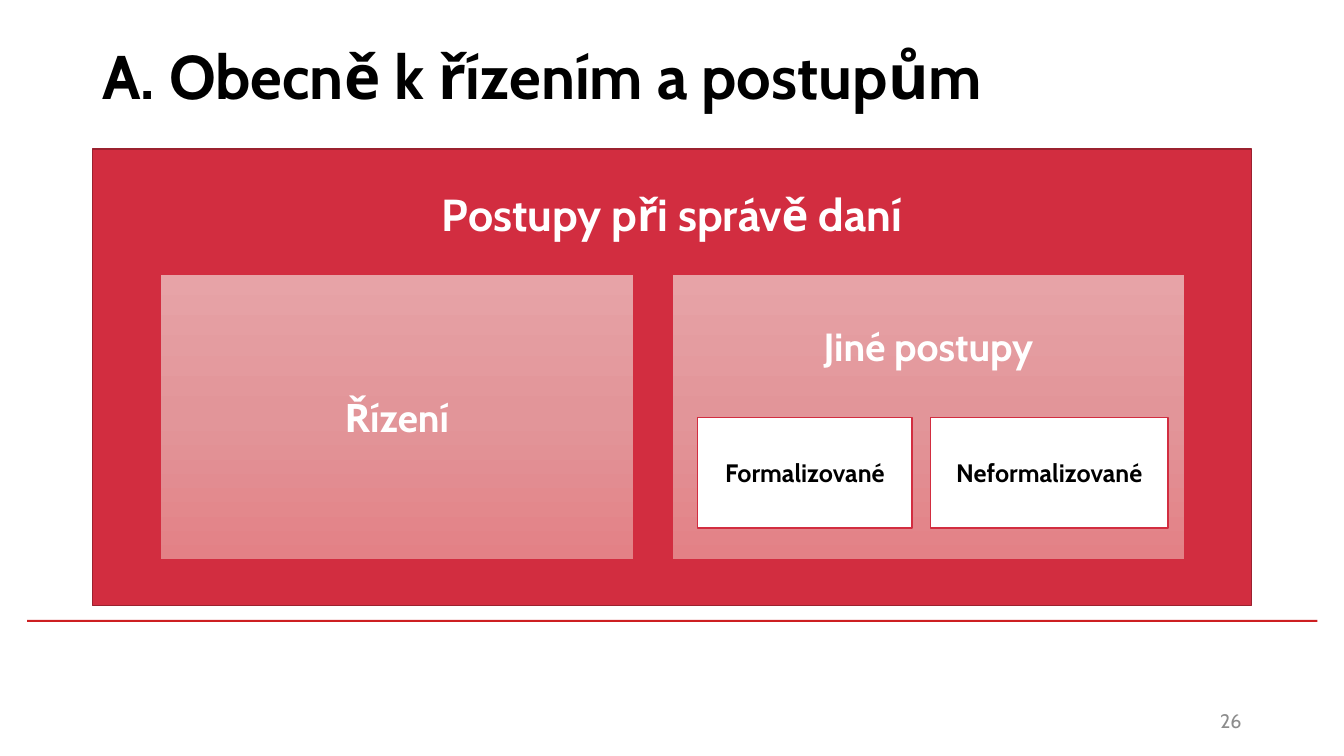
from copy import deepcopy
from dataclasses import dataclass

from pptx import Presentation
from pptx.dml.color import RGBColor
from pptx.enum.shapes import MSO_SHAPE
from pptx.enum.text import MSO_ANCHOR, MSO_AUTO_SIZE, PP_ALIGN
from pptx.oxml.ns import qn
from pptx.util import Emu, Inches, Pt

RECTANGLE = MSO_SHAPE.RECTANGLE
TOP, MIDDLE = MSO_ANCHOR.TOP, MSO_ANCHOR.MIDDLE
LEFT, CENTER, RIGHT = PP_ALIGN.LEFT, PP_ALIGN.CENTER, PP_ALIGN.RIGHT
NO_AUTOFIT = MSO_AUTO_SIZE.NONE

FONT = "Cabin"
COLORS = {
    "rule": "CD1F21",
    "red": "D22D40",
    "dark_red": "9B212F",
    "white": "FFFFFF",
    "black": "000000",
    "gray": "8C8C8C",
    "pink_top": "E7A3A7",
    "pink_middle": "E29599",
    "pink_bottom": "E38186",
}
PINK_GRADIENT = ("pink_top", "pink_middle", "pink_bottom")

SLIDE_WIDTH, SLIDE_HEIGHT = Emu(12192000), Inches(7.5)
COLUMN = SLIDE_WIDTH / 160
ROW = SLIDE_HEIGHT / 90
MARGIN, CONTENT_WIDTH = 11, 138
GROUP_TOP, GROUP_HEIGHT = 32.64, 33.96
LEAF_TOP, LEAF_HEIGHT = 49.68, 13.2


@dataclass(frozen=True)
class Area:
    column: float
    row: float
    columns: float
    rows: float

    def lengths(self) -> tuple[Emu, Emu, Emu, Emu]:
        return (
            Emu(round(self.column * COLUMN)),
            Emu(round(self.row * ROW)),
            Emu(round(self.columns * COLUMN)),
            Emu(round(self.rows * ROW)),
        )


@dataclass(frozen=True)
class Box:
    text: str
    area: Area
    fill: tuple[str, ...]
    line: str
    line_width: float
    size: float
    color: str = "white"
    top_inset: float = 0


TITLE_AREA = Area(MARGIN, 0.24, CONTENT_WIDTH, 17.4)
RULE_AREA = Area(3.24, 73.8, 153.6, 0.24)
NUMBER_AREA = Area(113, 83.4, 36, 4.8)
BOXES = (
    Box("Postupy při správě daní", Area(MARGIN, 17.76, CONTENT_WIDTH, 54.36),
        ("red",), "dark_red", 1, 32, top_inset=4.5),
    Box("Řízení", Area(19.08, GROUP_TOP, 56.28, GROUP_HEIGHT),
        PINK_GRADIENT, "red", 0.5, 28),
    Box("Jiné postupy", Area(80.04, GROUP_TOP, 60.96, GROUP_HEIGHT),
        PINK_GRADIENT, "red", 0.5, 28, top_inset=5.7),
    Box("Formalizované", Area(83.04, LEAF_TOP, 25.56, LEAF_HEIGHT),
        ("white",), "red", 1, 18, "black"),
    Box("Neformalizované", Area(110.76, LEAF_TOP, 28.32, LEAF_HEIGHT),
        ("white",), "red", 1, 18, "black"),
)


def rgb(name: str) -> RGBColor:
    return RGBColor.from_string(COLORS[name])


def write(shape, text: str, size: float, color: str, alignment,
          bold: bool = True, anchor=MIDDLE) -> None:
    frame = shape.text_frame
    frame.word_wrap = True
    frame.auto_size = NO_AUTOFIT
    frame.vertical_anchor = anchor
    paragraph = frame.paragraphs[0]
    paragraph.alignment = alignment
    run = paragraph.add_run()
    run.text = text
    run.font.name = FONT
    run.font.size = Pt(size)
    run.font.bold = bold
    run.font.color.rgb = rgb(color)


def paint(shape, fill: tuple[str, ...]) -> None:
    if len(fill) == 1:
        shape.fill.solid()
        shape.fill.fore_color.rgb = rgb(fill[0])
        return
    shape.fill.gradient()
    shape.fill.gradient_angle = 270
    stop_list = next(shape._element.spPr.iter(qn("a:gsLst")))
    while len(stop_list) < len(fill):
        stop_list.insert(1, deepcopy(stop_list[0]))
    for index, (stop, name) in enumerate(zip(shape.fill.gradient_stops, fill)):
        stop.position = index / (len(fill) - 1)
        stop.color.rgb = rgb(name)


def add_rectangle(slide, area: Area, fill: tuple[str, ...]):
    shape = slide.shapes.add_shape(RECTANGLE, *area.lengths())
    shape.shadow.inherit = False
    paint(shape, fill)
    return shape


def add_box(slide, box: Box) -> None:
    shape = add_rectangle(slide, box.area, box.fill)
    shape.line.color.rgb = rgb(box.line)
    shape.line.width = Pt(box.line_width)
    if box.top_inset:
        shape.text_frame.margin_top = Emu(round(box.top_inset * ROW))
    write(shape, box.text, box.size, box.color, CENTER,
          anchor=TOP if box.top_inset else MIDDLE)


def main() -> None:
    presentation = Presentation()
    presentation.slide_width = SLIDE_WIDTH
    presentation.slide_height = SLIDE_HEIGHT
    slide = presentation.slides.add_slide(presentation.slide_layouts[5])

    rule = add_rectangle(slide, RULE_AREA, ("rule",))
    rule.line.fill.background()

    title = slide.shapes.title
    title.left, title.top, title.width, title.height = TITLE_AREA.lengths()
    write(title, "A. Obecně k řízením a postupům", 44, "black", LEFT)

    number = slide.shapes.add_textbox(*NUMBER_AREA.lengths())
    write(number, "26", 14, "gray", RIGHT, bold=False)

    for box in BOXES:
        add_box(slide, box)

    presentation.save("out.pptx")


if __name__ == "__main__":
    main()
